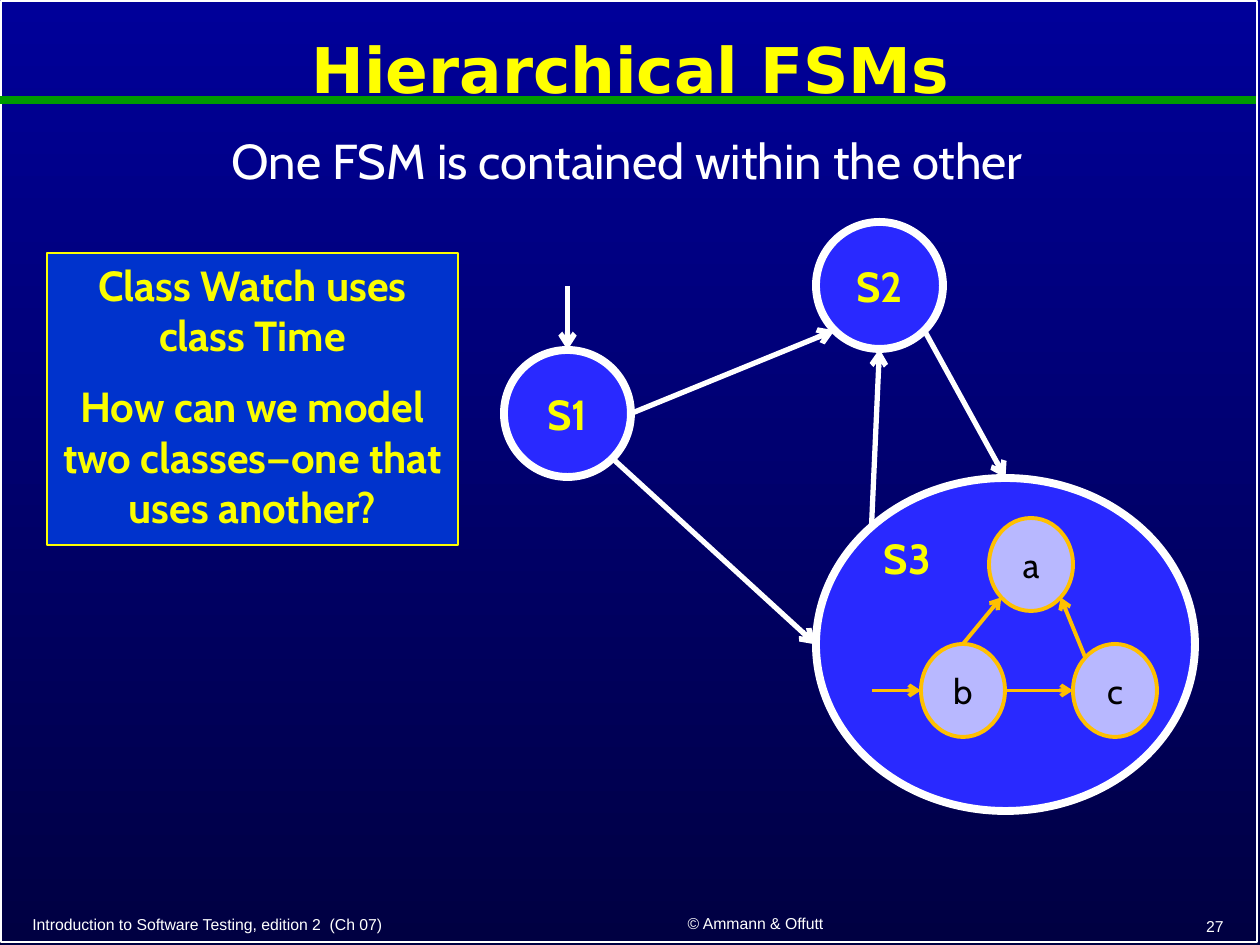
from lxml.etree import SubElement
from pptx import Presentation
from pptx.dml.color import RGBColor
from pptx.enum.shapes import MSO_CONNECTOR, MSO_SHAPE
from pptx.enum.text import MSO_ANCHOR, PP_ALIGN
from pptx.oxml.ns import qn
from pptx.util import Pt

SCALE = 914400 / 126
WHITE, YELLOW, LEMON, GOLD = "FFFFFF", "FFFF00", "FAFD00", "FFC000"
LEFT, MID, RIGHT = PP_ALIGN.LEFT, PP_ALIGN.CENTER, PP_ALIGN.RIGHT
TOP, CENTER = MSO_ANCHOR.TOP, MSO_ANCHOR.MIDDLE

TITLE = "Hierarchical FSMs"
LEAD = "One FSM is contained within the other"
NOTES = ["Class Watch uses class Time",
         "How can we model two classes—one that uses another?"]
FOOTER = [
    ("Introduction to Software Testing, edition 2  (Ch 07)", (20, 910, 515, 29), LEFT),
    ("© Ammann & Offutt", (556, 909, 399, 29), MID),
    ("27", (974, 911, 262, 30), RIGHT),
]
OUTER = {"S1": (504, 350, 127, 127), "S3": (816, 478, 379, 333),
         "S2": (816, 222, 127, 127)}
INNER = {"a": (989, 518, 84, 93), "b": (921, 644, 84, 93), "c": (1073, 644, 84, 93)}
STATES = OUTER | INNER
MOVES = [("S1", "E", "S2", "SW"), ("S1", "SE", "S3", "W"),
         ("S2", "SE", "S3", "N"), ("S3", "NW", "S2", "S"),
         ("b", "N", "a", "SW"), ("c", "NW", "a", "SE"), ("b", "E", "c", "W")]
STARTS = [("S1", "N", 0, -64), ("b", "W", -49, 0)]


def px(*nums):
    return [round(n * SCALE) for n in nums]


def color(code):
    return RGBColor.from_string(code)


def write(frame, lines, size, hue, font="Cabin", bold=False, align=MID,
          anchor=CENTER, space=None, gap=0):
    frame.word_wrap = True
    frame.vertical_anchor = anchor
    for i, line in enumerate(lines):
        para = frame.add_paragraph() if i else frame.paragraphs[0]
        para.alignment = align
        para.space_before = Pt(gap if i else 0)
        if space:
            para.line_spacing = space
        run = para.add_run()
        run.text = line
        run.font.name, run.font.size, run.font.bold = font, Pt(size), bold
        run.font.color.rgb = color(hue)


def draw(kind, box, fill, line, width):
    shape = slide.shapes.add_shape(kind, *px(*box))
    shape.shadow.inherit = False
    if fill:
        shape.fill.solid()
        shape.fill.fore_color.rgb = color(fill)
    else:
        shape.fill.background()
    shape.line.color.rgb = color(line)
    shape.line.width = Pt(width)
    return shape


def link(start, end, hue, width, arrow=True):
    line = slide.shapes.add_connector(MSO_CONNECTOR.STRAIGHT, *px(*start, *end))
    line.line.color.rgb = color(hue)
    line.line.width = Pt(width)
    props = line._element.spPr
    if arrow:
        SubElement(props.find(qn("a:ln")), qn("a:tailEnd"), type="arrow")
    SubElement(props, qn("a:effectLst"))


def site(name, side):
    x, y, w, h = STATES[name]
    dx = ("E" in side) - ("W" in side)
    dy = ("S" in side) - ("N" in side)
    reach = (dx * dx + dy * dy) ** 0.5 * 2
    return x + w / 2 + dx * w / reach, y + h / 2 + dy * h / reach


def style(name):
    return (WHITE, 3) if name in OUTER else (GOLD, 2.25)


def build():
    """Build the slide on nested state machines."""
    back = slide.background.fill
    back.gradient()
    back.gradient_angle = 270
    for stop, hue in zip(back.gradient_stops, ("000099", "000042")):
        stop.color.rgb = color(hue)

    draw(MSO_SHAPE.RECTANGLE, (1, 1, 1256, 941), None, WHITE, 1)
    link((0, 100), (1256, 100), "009900", 4.5, False)
    title = slide.shapes.title
    title.left, title.top, title.width, title.height = px(19, 14, 1223, 118)
    write(title.text_frame, [TITLE], 36, YELLOW, "DejaVu Sans", True, space=0.9)
    lead = slide.shapes.add_textbox(*px(210, 131, 834, 98))
    write(lead.text_frame, [LEAD], 28, WHITE, anchor=TOP, space=0.9)
    for text, box, align in FOOTER:
        foot = slide.shapes.add_textbox(*px(*box))
        write(foot.text_frame, [text], 9, WHITE, "Arial", align=align)

    for name, box in OUTER.items():
        state = draw(MSO_SHAPE.OVAL, box, "2929FF", WHITE, 4.5)
        align, anchor = (LEFT, TOP) if name == "S3" else (MID, CENTER)
        write(state.text_frame, [name], 24, LEMON, bold=True, align=align, anchor=anchor)
    for name, box in INNER.items():
        state = draw(MSO_SHAPE.OVAL, box, "B8B8FF", GOLD, 2.25)
        write(state.text_frame, [name], 20, "000000")
    for src, out, dst, into in MOVES:
        link(site(src, out), site(dst, into), *style(src))
    for name, side, dx, dy in STARTS:
        x, y = site(name, side)
        link((x + dx, y + dy), (x, y), *style(name))

    card = draw(MSO_SHAPE.RECTANGLE, (47, 253, 411, 292), "0033CC", YELLOW, 1.5)
    write(card.text_frame, NOTES, 24, LEMON, bold=True, anchor=TOP, gap=12)


deck = Presentation()
deck.slide_width, deck.slide_height = px(1260, 945)
slide = deck.slides.add_slide(deck.slide_layouts[5])
build()
deck.save("out.pptx")
